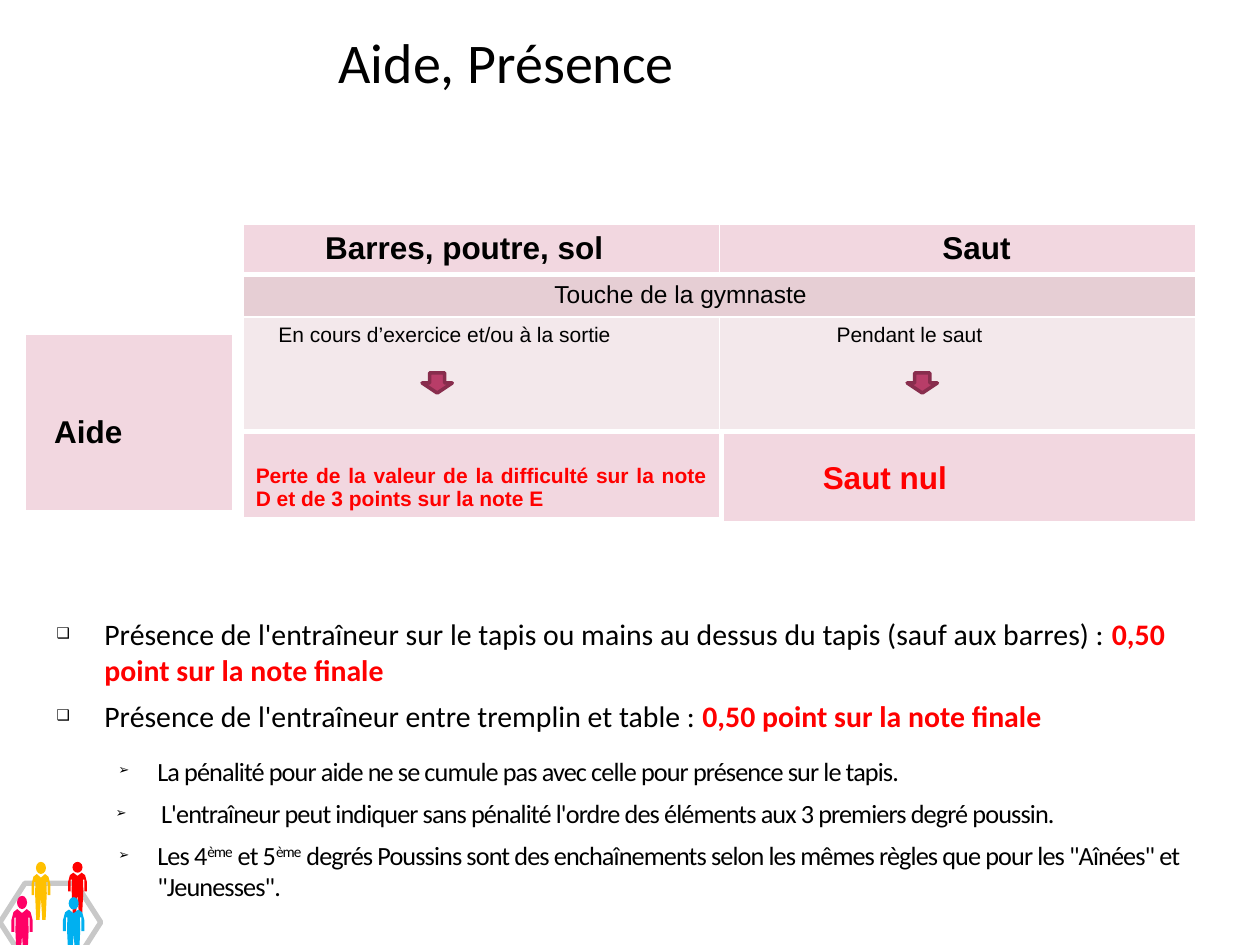
from dataclasses import dataclass

from lxml.etree import SubElement
from pptx import Presentation
from pptx.dml.color import RGBColor
from pptx.enum.shapes import MSO_SHAPE
from pptx.enum.text import MSO_ANCHOR, PP_ALIGN
from pptx.oxml import parse_xml
from pptx.oxml.ns import nsdecls, qn
from pptx.util import Inches, Pt

BLACK, WHITE, RED = "000000", "FFFFFF", "FF0000"
PINK, ROSE, PALE = "F2D7E0", "E6CED4", "F3E8EB"
PENALTY = "0,50 point sur la note finale"

# Right half of a standing figure: offset from its axis, height from shoulders
HALF_BODY = [(0, 0.08), (0.22, 0), (0.4, 0.06), (0.5, 0.23), (0.5, 0.46),
             (0.36, 0.46), (0.36, 0.17), (0.29, 0.17), (0.31, 0.42),
             (0.25, 1), (0.07, 1), (0, 0.51)]


@dataclass
class Person:
    left: float
    top: float
    width: float
    height: float
    color: str


@dataclass
class Cell:
    text: str
    size: float
    fill: str = PINK
    color: str = BLACK
    bold: bool = False
    indent: float = 0
    top: float = 0.05
    anchor: MSO_ANCHOR = MSO_ANCHOR.TOP
    align: PP_ALIGN = PP_ALIGN.LEFT


@dataclass
class Bullet:
    runs: list
    symbol: str
    size: float
    left: float
    hanging: float
    before: float = 6
    after: float = 0
    spacing: float = 0


PEOPLE = [
    Person(0.09, 7.11, 0.17, 0.5, "FF0066"),
    Person(0.25, 6.84, 0.15, 0.46, "FFC000"),
    Person(0.54, 6.84, 0.15, 0.41, RED),
    Person(0.5, 7.12, 0.17, 0.47, "00B0F0"),
]

# Each run is (text, format)
STRONG, RAISED = {"color": RED, "bold": True}, {"baseline": 30}
MAIN = {"symbol": "❑", "size": 17, "left": 0.38, "hanging": 0.38, "after": 6}
SUB = {"symbol": "➢", "size": 15, "left": 0.8, "hanging": 0.31, "spacing": -0.5}
BULLETS = [
    Bullet([("Présence de l'entraîneur sur le tapis ou mains au dessus du tapis "
             "(sauf aux barres) : ", {}), (PENALTY, STRONG)], **MAIN | {"before": 0}),
    Bullet([("Présence de l'entraîneur entre tremplin et table : ", {}),
            (PENALTY, STRONG)], **MAIN | {"before": 0}),
    Bullet([("La pénalité pour aide ne se cumule pas avec celle pour présence "
             "sur le tapis.", {})], **SUB),
    Bullet([("L'entraîneur peut indiquer sans pénalité l'ordre des éléments aux "
             "3 premiers degré poussin.", {})],
           **SUB | {"left": 0.83, "hanging": 0.36}),
    Bullet([("Les 4", {}), ("ème", RAISED), (" et 5", {}), ("ème", RAISED),
            (" degrés Poussins sont des enchaînements selon les mêmes règles que "
             "pour les \"Aînées\" et \"Jeunesses\".", {})], **SUB),
]


def rgb(color: str) -> RGBColor:
    return RGBColor.from_string(color)


def add_text(paragraph, text: str, *, size: float, font="Calibri", color=BLACK,
             bold=False, spacing=0.0, baseline=0) -> None:
    run = paragraph.add_run()
    run.text = text
    run.font.size, run.font.name, run.font.bold = Pt(size), font, bold
    run.font.color.rgb = rgb(color)
    properties = run._r.get_or_add_rPr()
    if spacing:
        properties.set("spc", str(int(spacing * 100)))
    if baseline:
        properties.set("baseline", str(baseline * 1000))


def add_text_box(slide, left: float, top: float, width: float, height: float):
    box = slide.shapes.add_textbox(Inches(left), Inches(top),
                                   Inches(width), Inches(height))
    box.text_frame.word_wrap = True
    return box.text_frame


def add_preset(slide, kind, left, top, width, height, *, fill=None, line=None,
               line_width=1.0):
    shape = slide.shapes.add_shape(kind, Inches(left), Inches(top),
                                   Inches(width), Inches(height))
    paint(shape, fill, line, line_width)
    return shape


def paint(shape, fill, line=None, line_width=1.0) -> None:
    shape.shadow.inherit = False
    for part, color in ((shape.fill, fill), (shape.line.fill, line)):
        if color:
            part.solid()
            part.fore_color.rgb = rgb(color)
        else:
            part.background()
    if line:
        shape.line.width = Pt(line_width)


def draw_person(slide, person: Person) -> None:
    head = 0.21 * person.height
    middle = person.left + person.width / 2
    add_preset(slide, MSO_SHAPE.OVAL, middle - 0.04, person.top, 0.08, head,
               fill=person.color)
    mirrored = [(-x, y) for x, y in reversed(HALF_BODY[1:-1])]
    points = [(Inches(middle + x * person.width),
               Inches(person.top + head + y * (person.height - head)))
              for x, y in HALF_BODY + mirrored]
    builder = slide.shapes.build_freeform(*points[0])
    builder.add_line_segments(points[1:], close=True)
    paint(builder.convert_to_shape(), person.color)


def set_borders(cell, top: float, bottom: float) -> None:
    properties = cell._tc.get_or_add_tcPr()
    widths = {"lnL": 1, "lnR": 1, "lnT": top, "lnB": bottom}
    for position, (tag, width) in enumerate(widths.items()):
        properties.insert(position, parse_xml(
            f'<a:{tag} {nsdecls("a")} w="{Pt(width)}"><a:solidFill>'
            f'<a:srgbClr val="{WHITE}"/></a:solidFill></a:{tag}>'))


def draw_table(slide, left: float, top: float, column_width: float,
               heights: list, rows: list):
    """The first row has a thick lower border; None leaves a cell empty."""
    columns = len(rows[0])
    table = slide.shapes.add_table(
        len(rows), columns, Inches(left), Inches(top),
        Inches(column_width * columns), Inches(sum(heights))).table
    table.first_row = table.horz_banding = False
    for column in table.columns:
        column.width = Inches(column_width)
    for index, (height, row) in enumerate(zip(heights, rows)):
        table.rows[index].height = Inches(height)
        for number, content in enumerate(row):
            cell = table.cell(index, number)
            if content:
                fill_cell(cell, content)
            set_borders(cell, 3 if index == 1 else 1, 3 if index == 0 else 1)
    return table


def fill_cell(cell, content: Cell) -> None:
    cell.fill.solid()
    cell.fill.fore_color.rgb = rgb(content.fill)
    cell.margin_left = Inches(0.1 + content.indent)
    cell.margin_top = Inches(content.top)
    cell.vertical_anchor = content.anchor
    paragraph = cell.text_frame.paragraphs[0]
    paragraph.alignment = content.align
    add_text(paragraph, content.text, size=content.size, font="Arial",
             color=content.color, bold=content.bold)


def write_bullet(paragraph, bullet: Bullet) -> None:
    properties = paragraph._p.get_or_add_pPr()
    properties.set("marL", str(Inches(bullet.left)))
    properties.set("indent", str(-Inches(bullet.hanging)))
    SubElement(properties, qn("a:buSzPct"), val="50000")
    SubElement(properties, qn("a:buFont"), typeface="Arial")
    SubElement(properties, qn("a:buChar"), char=bullet.symbol)
    paragraph.space_before, paragraph.space_after = Pt(bullet.before), Pt(bullet.after)
    for text, style in bullet.runs:
        add_text(paragraph, text, size=bullet.size, spacing=bullet.spacing, **style)


def main() -> None:
    presentation = Presentation()
    presentation.slide_width, presentation.slide_height = Inches(10), Inches(7.5)
    slide = presentation.slides.add_slide(presentation.slide_layouts[6])

    # Corner decoration
    hexagon = add_preset(slide, MSO_SHAPE.HEXAGON, 0, 7.01, 0.8, 0.62,
                         line="C8C8C8", line_width=3)
    hexagon.adjustments[0] = 0.32
    for person in PEOPLE:
        draw_person(slide, person)

    # Rules on the coach's presence
    frame = add_text_box(slide, 0.35, 4.84, 9.29, 2.22)
    for index, bullet in enumerate(BULLETS):
        write_bullet(frame.add_paragraph() if index else frame.paragraphs[0], bullet)

    # Title
    title = add_text_box(slide, 1.46, 0.21, 5.12, 0.55)
    title.vertical_anchor = MSO_ANCHOR.MIDDLE
    title.paragraphs[0].alignment = PP_ALIGN.CENTER
    add_text(title.paragraphs[0], "Aide, Présence", size=32)

    # Apparatus table, its side label and the penalties below it
    apparatus = draw_table(slide, 1.93, 1.78, 3.78, [0.38, 0.32, 0.9], [
        [Cell("Barres, poutre, sol", 18, bold=True, indent=0.55),
         Cell("Saut", 18, bold=True, indent=1.67)],
        [Cell("Touche de la gymnaste", 14, ROSE, indent=2.37), None],
        [Cell("En cours d’exercice et/ou à la sortie", 12, PALE, indent=0.18),
         Cell("Pendant le saut", 12, PALE, indent=0.83)],
    ])
    apparatus.cell(1, 0).merge(apparatus.cell(1, 1))
    draw_table(slide, 0.2, 2.65, 1.65, [1.42],
               [[Cell("Aide", 18, bold=True, indent=0.13, top=0.64)]])
    draw_table(slide, 1.93, 3.44, 3.78, [0.66], [[
        Cell("Perte de la valeur de la difficulté sur la note D et de 3 points "
             "sur la note E", 12, color=RED, bold=True, top=0.23,
             anchor=MSO_ANCHOR.MIDDLE, align=PP_ALIGN.JUSTIFY)]])
    draw_table(slide, 5.74, 3.44, 3.75, [0.71], [[
        Cell("Saut nul", 18, color=RED, bold=True, indent=0.69,
             anchor=MSO_ANCHOR.MIDDLE)]])

    # Arrows from each fault to its penalty
    for left in (3.35, 7.2):
        add_preset(slide, MSO_SHAPE.DOWN_ARROW, left, 2.96, 0.24, 0.16,
                   fill="B83D68", line="882D4D", line_width=2)

    presentation.save("out.pptx")


if __name__ == "__main__":
    main()
